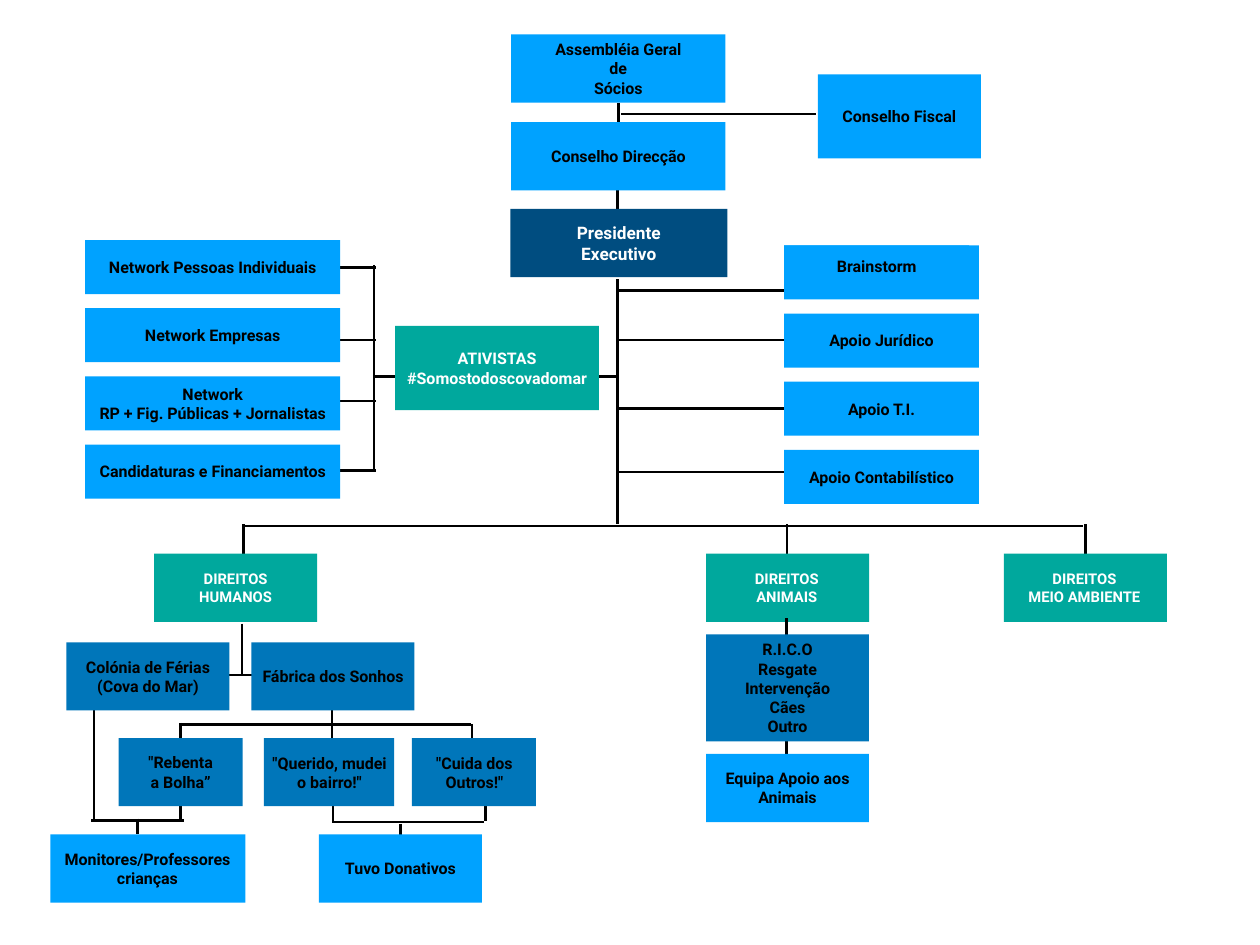
from dataclasses import dataclass

from lxml.etree import SubElement
from pptx import Presentation
from pptx.dml.color import RGBColor
from pptx.enum.shapes import MSO_CONNECTOR as Connector, MSO_SHAPE as Preset
from pptx.enum.text import MSO_ANCHOR as Anchor, MSO_AUTO_SIZE as AutoSize, PP_ALIGN as Align
from pptx.oxml.ns import qn
from pptx.util import Pt


@dataclass(frozen=True)
class Style:
    fill: str
    ink: str = "000000"
    size: int = 13


@dataclass(frozen=True)
class Theme:
    font: str = "Roboto"
    line: str = "000000"
    line_width: int = 2
    inset: float = 4.3
    unit: Style = Style("00A2FF")
    project: Style = Style("0076BA")
    president: Style = Style("004D80", "FFFFFF", 14)
    activists: Style = Style("00A89D", "FFFFFF")
    department: Style = Style("00A89D", "FFFFFF", 12)


@dataclass(frozen=True)
class Box:
    left: float
    top: float
    width: float
    height: float

    def inner(self, left, top, width, height):
        return Box(self.left + left, self.top + top, width, height)

    def lengths(self):
        return Pt(self.left), Pt(self.top), Pt(self.width), Pt(self.height)


THEME = Theme()
CARD_WIDTH, CARD_HEIGHT = 132.5, 55.4
ROW_HEIGHT, ROW_PITCH = 43.9, 55.4


def write(shape, lines, style):
    frame = shape.text_frame
    frame.vertical_anchor = Anchor.MIDDLE
    frame.margin_left = frame.margin_right = Pt(THEME.inset)
    frame.margin_top = frame.margin_bottom = Pt(THEME.inset)
    for index, line in enumerate(lines):
        para = frame.add_paragraph() if index else frame.paragraphs[0]
        para.text = line
        para.alignment = Align.CENTER
        para.font.name = THEME.font
        para.font.size = Pt(style.size)
        para.font.bold = True
        para.font.color.rgb = RGBColor.from_string(style.ink)
    return frame


def add_card(page, box, style, lines=()):
    card = page.shapes.add_shape(Preset.RECTANGLE, *box.lengths())
    card.shadow.inherit = False
    card.fill.solid()
    card.fill.fore_color.rgb = RGBColor.from_string(style.fill)
    card.line.fill.background()
    if lines:
        write(card, lines, style).word_wrap = True


def add_labelled_card(page, box, style, lines, label):
    add_card(page, box, style)
    frame = write(page.shapes.add_textbox(*box.inner(*label).lengths()), lines, style)
    frame.word_wrap = False
    frame.auto_size = AutoSize.SHAPE_TO_FIT_TEXT


def add_line(page, box, x1, y1, x2, y2):
    ends = (Pt(box.left + x1), Pt(box.top + y1), Pt(box.left + x2), Pt(box.top + y2))
    line = page.shapes.add_connector(Connector.STRAIGHT, *ends)
    line.line.color.rgb = RGBColor.from_string(THEME.line)
    line.line.width = Pt(THEME.line_width)
    SubElement(line._element.spPr, qn("a:effectLst"))


def add_horizontal(page, box, y, start, end):
    add_line(page, box, start, y, end, y)


def add_vertical(page, box, x, start, end):
    add_line(page, box, x, start, x, end)


def build_leadership(page, box):
    add_vertical(page, box, 87.9, 55.4, 77.8)
    add_vertical(page, box, 87.1, 119.6, 141.9)
    add_horizontal(page, box, 64.8, 90, 248.4)
    add_card(page, box.inner(0.7, 0, 174.2, CARD_HEIGHT), THEME.unit,
             ["Assembléia Geral", "de", "Sócios"])
    add_card(page, box.inner(0.7, 71.3, 174.2, CARD_HEIGHT), THEME.unit, ["Conselho Direcção"])
    add_card(page, box.inner(0, 141.8, 176.4, CARD_HEIGHT), THEME.president,
             ["Presidente", "Executivo"])
    add_card(page, box.inner(249.9, 32.4, CARD_WIDTH, 68.4), THEME.unit, ["Conselho Fiscal"])


def build_support(page, box):
    card_left = 135.4
    add_vertical(page, box, 0, 27.4, 226.8)
    for y in (36.7, 77, 132.5, 184.3):
        add_horizontal(page, box, y, 0.7, card_left)
    add_card(page, box.inner(card_left, 0, 158.4, ROW_HEIGHT), THEME.unit)
    add_card(page, box.inner(card_left, 0, 150.5, 33.8), THEME.unit, ["Brainstorm"])
    for row, name in enumerate(("Apoio Jurídico", "Apoio T.I.", "Apoio Contabilístico"), 1):
        add_card(page, box.inner(card_left, row * ROW_PITCH, 158.4, ROW_HEIGHT), THEME.unit, [name])


def build_network(page, box):
    groups = (
        ["Network Pessoas Individuais"],
        ["Network Empresas"],
        ["Network", "RP + Fig. Públicas + Jornalistas"],
        ["Candidaturas e Financiamentos"],
    )
    add_vertical(page, box, 234.7, 20.2, 188.6)
    for y in (22.3, 81.4, 131, 187.2):
        add_horizontal(page, box, y, 205.9, 236.2)
    for start, end in ((234, 254.9), (403.9, 434.2)):
        add_horizontal(page, box, 110.9, start, end)
    for row, lines in enumerate(groups):
        add_card(page, box.inner(0, row * ROW_PITCH, 207.4, ROW_HEIGHT), THEME.unit, lines)
    add_card(page, box.inner(252, 69.8, 165.6, 68.4), THEME.activists,
             ["ATIVISTAS", "#Somostodoscovadomar"])


def build_departments(page, box):
    departments = (
        (0, 72.7, "HUMANOS", 30.2, 72),
        (448.6, 514.1, "ANIMAIS", 31, 69.1),
        (690.5, 756.7, "MEIO AMBIENTE", 12.2, 106.6),
    )
    add_horizontal(page, box, 1.4, 74.2, 755.2)
    for left, drop, name, label_left, label_width in departments:
        add_vertical(page, box, drop, 0, 23.8)
        add_labelled_card(page, box.inner(left, 23.8, CARD_WIDTH, CARD_HEIGHT), THEME.department,
                          ["DIREITOS", name], (label_left, 9, label_width, 37.4))


def build_animals(page, box):
    for start, end in ((-13, 9.4), (85.7, 108)):
        add_vertical(page, box, 65.5, start, end)
    add_card(page, box.inner(0, 0, CARD_WIDTH, 87.1), THEME.project,
             ["R.I.C.O", "Resgate", "Intervenção", "Cães", "Outro"])
    add_card(page, box.inner(0, 97.2, CARD_WIDTH, CARD_HEIGHT), THEME.unit,
             ["Equipa Apoio aos Animais"])


def build_humans(page, box):
    project_top, team_top = 77.8, 156.2
    for y, start, end in ((26.6, 142.6, 166.3), (67, 105.1, 342),
                          (146.2, 229, 352.1), (144.7, 33.1, 108.7)):
        add_horizontal(page, box, y, start, end)
    for x, start, end in ((155.5, -15.1, 27.4), (229, 55.4, 78.5), (342.7, 66.2, 78.5),
                          (105.8, 65.5, 77.8), (353.5, 133.2, 145.4), (229.7, 133.2, 145.4),
                          (35.3, 55.4, 146.2), (105.8, 133.2, 146.2), (70.6, 143.3, 155.5),
                          (284.4, 147.6, 159.8)):
        add_vertical(page, box, x, start, end)
    add_card(page, box.inner(13, 0, CARD_WIDTH, CARD_HEIGHT), THEME.project,
             ["Colónia de Férias", "(Cova do Mar)"])
    add_card(page, box.inner(55.4, project_top, 100.8, CARD_HEIGHT), THEME.project,
             ['"Rebenta', "a Bolha”"])
    labelled = (
        (163.4, 0, CARD_WIDTH, THEME.project, ["Fábrica dos Sonhos"], (0, 15.8, 132.5, 23.8)),
        (173.5, project_top, 105.8, THEME.project, ['"Querido, mudei', 'o bairro!"'],
         (-3.6, 8.3, 113.8, 39.6)),
        (293.8, project_top, 100.8, THEME.project, ['"Cuida dos', 'Outros!"'],
         (10.1, 8.3, 81.4, 39.6)),
        (0, team_top, 158.4, THEME.unit, ["Monitores/Professores", "crianças"],
         (3.6, 7.9, 150.5, 39.6)),
        (218.2, team_top, CARD_WIDTH, THEME.unit, ["Tuvo Donativos"], (13.7, 15.8, 105.1, 23.8)),
    )
    for left, top, width, style, lines, label in labelled:
        add_labelled_card(page, box.inner(left, top, width, CARD_HEIGHT), style, lines, label)


def main():
    deck = Presentation()
    deck.slide_width, deck.slide_height = Pt(1024), Pt(768)
    page = deck.slides.add_slide(deck.slide_layouts[6])
    build_leadership(page, Box(414.7, 28, 382.4, 197.2))
    build_support(page, Box(501.8, 199.4, 293.8, 226.8))
    build_network(page, Box(69.1, 195.1, 434.2, 210.1))
    build_departments(page, Box(125.3, 426.2, 823, 79.2))
    build_animals(page, Box(573.8, 515.5, 132.5, 152.6))
    build_humans(page, Box(41, 522, 394.6, 211.6))
    deck.save("out.pptx")


if __name__ == "__main__":
    main()
